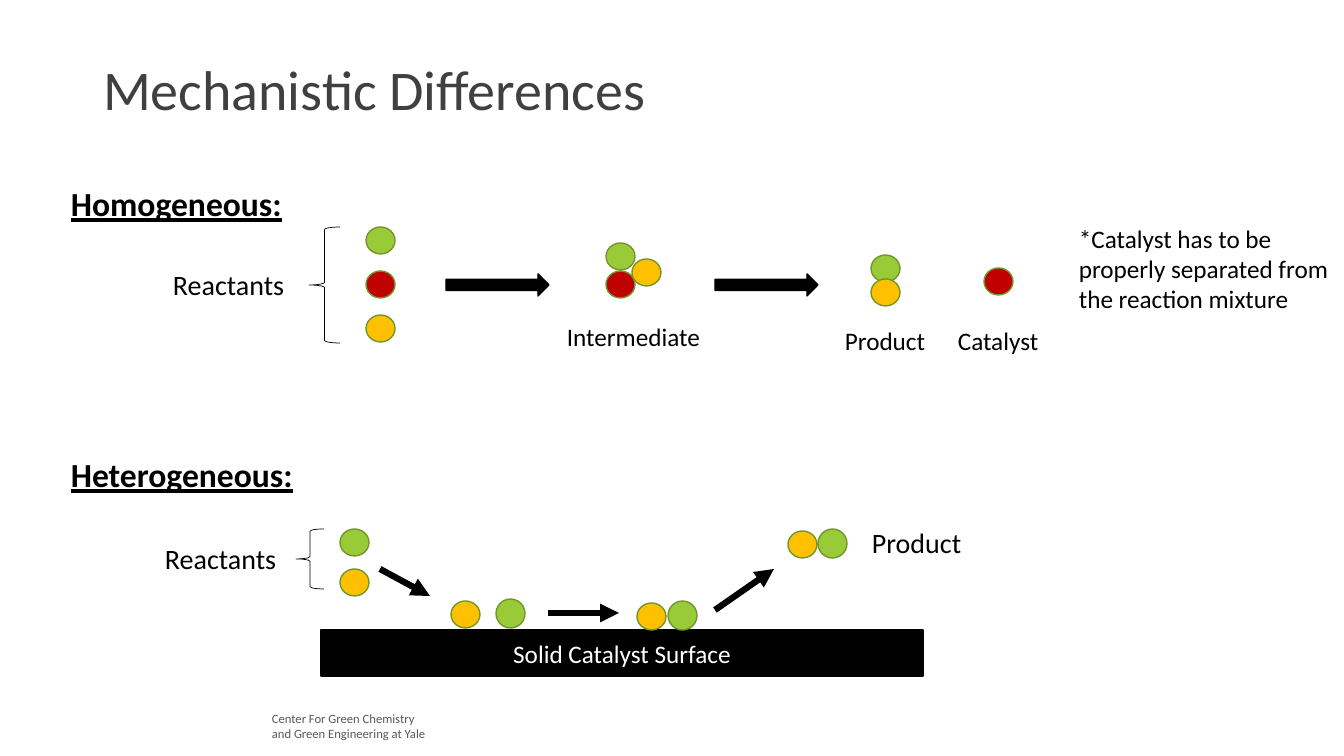
import pptx
import pptx.dml.color
import pptx.enum.shapes
import pptx.enum.text
import pptx.oxml
import pptx.oxml.ns
import pptx.util

SCALE = 914400 / 100.8
THEME = {
    "font": "Calibri",
    "black": "000000",
    "white": "FFFFFF",
    "title": "404040",
    "footer": "595959",
    "green": "99CB38",
    "red": "C00000",
    "yellow": "FFC000",
    "rim": "719629",
    "title_size": 40,
    "heading_size": 24,
    "large_size": 20,
    "label_size": 18,
    "footer_size": 9,
}
SHAPE = pptx.enum.shapes.MSO_SHAPE
ALIGN = pptx.enum.text.PP_ALIGN
MIDDLE = pptx.enum.text.MSO_ANCHOR.MIDDLE

deck = pptx.Presentation()
deck.slide_width, deck.slide_height = round(1344 * SCALE), round(756 * SCALE)
page = deck.slides.add_slide(deck.slide_layouts[5])


def write(box, lines, size, color, align=ALIGN.LEFT, heading=False):
    frame = box.text_frame
    for index, line in enumerate(lines):
        para = frame.paragraphs[0] if index == 0 else frame.add_paragraph()
        para.alignment = align
        span = para.add_run()
        span.text = line
        span.font.name = THEME["font"]
        span.font.size = pptx.util.Pt(THEME[size])
        span.font.color.rgb = pptx.dml.color.RGBColor.from_string(THEME[color])
        if heading:
            span.font.bold = True
            span.font.underline = True


def draw(kind, bounds, fill, line, weight):
    shape = page.shapes.add_shape(kind, *[round(value * SCALE) for value in bounds])
    shape.shadow.inherit = False
    if fill:
        shape.fill.solid()
        shape.fill.fore_color.rgb = pptx.dml.color.RGBColor.from_string(THEME[fill])
    else:
        shape.fill.background()
    shape.line.color.rgb = pptx.dml.color.RGBColor.from_string(THEME[line])
    shape.line.width = pptx.util.Pt(weight)
    return shape


title = page.shapes.title
title.left, title.top, title.width, title.height = [
    round(value * SCALE) for value in (93, 19, 1159, 146)
]
title.text_frame.vertical_anchor = MIDDLE
write(title, ["Mechanistic Differences"], "title_size", "title")
title.text_frame.paragraphs[0].line_spacing = 0.9

surface = draw(SHAPE.RECTANGLE, (321, 630, 602, 46), "black", "black", 1)
surface.text_frame.vertical_anchor = MIDDLE
write(surface, ["Solid Catalyst Surface"], "label_size", "white", ALIGN.CENTER)

for bounds in [(309, 227, 31, 116), (296, 529, 28, 60)]:
    draw(SHAPE.LEFT_BRACE, bounds, None, "black", 0.5)

for left in (446, 715):
    draw(SHAPE.RIGHT_ARROW, (left, 274, 103, 22), "black", "black", 1)

for row, color in enumerate(("green", "red", "yellow")):
    draw(SHAPE.OVAL, (366, 227 + 44 * row, 29, 27), color, "rim", 1)

molecules = [
    (606, 243, 27, "green"),
    (606, 271, 27, "red"),
    (632, 259, 27, "yellow"),
    (871, 255, 27, "green"),
    (871, 279, 27, "yellow"),
    (984, 268, 27, "red"),
    (340, 529, 27, "green"),
    (340, 569, 27, "yellow"),
    (451, 601, 27, "yellow"),
    (496, 599, 29, "green"),
    (668, 601, 29, "green"),
    (637, 603, 27, "yellow"),
    (818, 529, 29, "green"),
    (788, 531, 27, "yellow"),
]
for left, top, height, color in molecules:
    draw(SHAPE.OVAL, (left, top, 29, height), color, "rim", 1)

for ends in [(380, 569, 430, 596), (548, 613, 619, 613), (715, 610, 774, 569)]:
    arrow = page.shapes.add_connector(
        pptx.enum.shapes.MSO_CONNECTOR.STRAIGHT, *[round(value * SCALE) for value in ends]
    )
    arrow.line.color.rgb = pptx.dml.color.RGBColor.from_string(THEME["black"])
    arrow.line.width = pptx.util.Pt(4.5)
    head = pptx.oxml.parse_xml(
        f'<a:tailEnd {pptx.oxml.ns.nsdecls("a")} type="triangle"/>'
    )
    arrow.line._get_or_add_ln().append(head)
    effects = pptx.oxml.parse_xml(f'<a:effectLst {pptx.oxml.ns.nsdecls("a")}/>')
    arrow._element.spPr.append(effects)

note = ["*Catalyst has to be", "properly separated from", "the reaction mixture"]
footer = ["Center For Green Chemistry", "and Green Engineering at Yale"]
texts = [
    ((61, 178, 233, 50), ["Homogeneous:"], "heading_size", "black", False),
    ((163, 263, 133, 44), ["Reactants"], "large_size", "black", False),
    ((557, 316, 155, 40), ["Intermediate"], "label_size", "black", False),
    ((835, 320, 102, 40), ["Product"], "label_size", "black", False),
    ((948, 320, 102, 40), ["Catalyst"], "label_size", "black", False),
    ((1069, 218, 275, 102), note, "label_size", "black", True),
    ((61, 449, 245, 50), ["Heterogeneous:"], "heading_size", "black", False),
    ((155, 537, 133, 44), ["Reactants"], "large_size", "black", False),
    ((862, 521, 111, 44), ["Product"], "large_size", "black", False),
    ((262, 706, 187, 40), footer, "footer_size", "footer", True),
]
for bounds, lines, size, color, wrap in texts:
    box = page.shapes.add_textbox(*[round(value * SCALE) for value in bounds])
    box.text_frame.word_wrap = wrap
    write(box, lines, size, color, heading=size == "heading_size")

deck.save("out.pptx")
